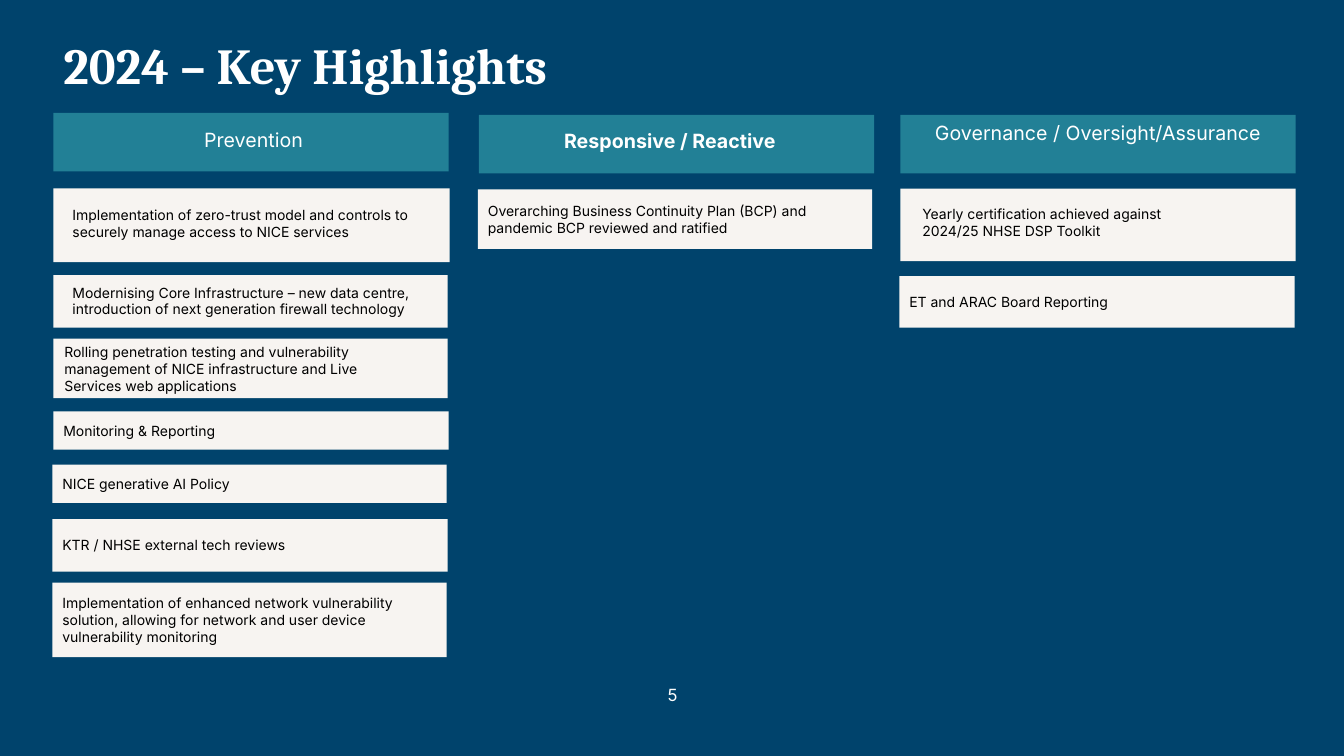
"""Build the 2024 key highlights slide with three columns of cards."""
from typing import NamedTuple, Optional

from pptx import Presentation
from pptx import util as u
from pptx.dml.color import RGBColor
from pptx.enum import shapes, text

NAVY = RGBColor(0x00, 0x43, 0x6C)
TEAL = RGBColor(0x22, 0x80, 0x96)
CREAM = RGBColor(0xF7, 0xF4, 0xF1)
WHITE = RGBColor(0xFF, 0xFF, 0xFF)
BLACK = RGBColor(0x00, 0x00, 0x00)


class Area(NamedTuple):
    """Hold left, top, width and height in inches."""
    left: float
    top: float
    width: float
    height: float


class Style(NamedTuple):
    """Describe how a text looks."""
    size: int
    color: RGBColor
    font: str = "Inter"
    bold: bool = False
    align: text.PP_ALIGN = text.PP_ALIGN.LEFT


class Panel(NamedTuple):
    """Describe a filled panel, with an optional separate area for its text."""
    area: Area
    wording: str
    text_area: Optional[Area] = None
    fill: RGBColor = CREAM
    style: Style = Style(10, BLACK)


CENTER = text.PP_ALIGN.CENTER
TITLE = Style(36, WHITE, "Cambria", bold=True)
HEADING = Style(14, WHITE, align=CENTER)
PAGE_NUMBER = Style(12, WHITE, align=CENTER)

HEADINGS = [
    Panel(Area(0.53, 1.12, 3.92, 0.58), "Prevention",
          Area(0.79, 1.22, 3.45, 0.34), TEAL, HEADING),
    Panel(Area(4.75, 1.14, 3.92, 0.58), "Responsive / Reactive",
          Area(5.13, 1.23, 3.03, 0.34), TEAL, HEADING._replace(bold=True)),
    Panel(Area(8.93, 1.14, 3.92, 0.58), "Governance / Oversight/Assurance",
          Area(9.17, 1.15, 3.44, 0.57), TEAL, HEADING),
]
PREVENTION = [
    Panel(Area(0.53, 1.87, 3.93, 0.73),
          "Implementation of zero-trust model and controls to securely manage "
          "access to NICE services", Area(0.62, 2, 3.71, 0.44)),
    Panel(Area(0.53, 2.73, 3.91, 0.52),
          "Modernising Core Infrastructure – new data centre, introduction of "
          "next generation firewall technology", Area(0.62, 2.77, 3.7, 0.44)),
    Panel(Area(0.53, 3.36, 3.91, 0.59),
          "Rolling penetration testing and vulnerability management of NICE "
          "infrastructure and Live Services web applications",
          Area(0.54, 3.36, 3.7, 0.61)),
    Panel(Area(0.53, 4.08, 3.92, 0.38), "Monitoring & Reporting"),
    Panel(Area(0.52, 4.61, 3.91, 0.38), "NICE generative AI Policy"),
    Panel(Area(0.52, 5.15, 3.92, 0.52), "KTR / NHSE external tech reviews"),
    Panel(Area(0.52, 5.78, 3.91, 0.74),
          "Implementation of enhanced network vulnerability solution, allowing "
          "for network and user device vulnerability monitoring"),
]
RESPONSE = [
    Panel(Area(4.74, 1.88, 3.91, 0.59),
          "Overarching Business Continuity Plan (BCP) and pandemic BCP "
          "reviewed and ratified"),
]
GOVERNANCE = [
    Panel(Area(8.93, 1.87, 3.92, 0.72),
          "Yearly certification achieved against 2024/25 NHSE DSP Toolkit",
          Area(9.05, 1.99, 2.8, 0.44)),
    Panel(Area(8.92, 2.74, 3.92, 0.51), "ET and ARAC Board Reporting"),
]


def write(shape, wording: str, style: Style, anchor: text.MSO_ANCHOR) -> None:
    """Fill a shape with one styled paragraph."""
    frame = shape.text_frame
    frame.text = wording
    frame.word_wrap = True
    frame.vertical_anchor = anchor
    para = frame.paragraphs[0]
    para.alignment = style.align
    span = para.runs[0]
    span.font.name = style.font
    span.font.size = u.Pt(style.size)
    span.font.bold = style.bold
    span.font.color.rgb = style.color


def add_text(page, area: Area, wording: str, style: Style) -> None:
    """Add a text box that starts at the top of its area."""
    box = page.shapes.add_textbox(*map(u.Inches, area))
    write(box, wording, style, text.MSO_ANCHOR.TOP)


def add_panel(page, panel: Panel) -> None:
    """Add a filled rectangle with its text."""
    card = page.shapes.add_shape(
        shapes.MSO_SHAPE.RECTANGLE, *map(u.Inches, panel.area))
    card.shadow.inherit = False
    card.fill.solid()
    card.fill.fore_color.rgb = panel.fill
    card.line.fill.background()
    if panel.text_area:
        add_text(page, panel.text_area, panel.wording, panel.style)
    else:
        write(card, panel.wording, panel.style, text.MSO_ANCHOR.MIDDLE)


def main() -> None:
    """Build and save the deck."""
    deck = Presentation()
    deck.slide_width, deck.slide_height = u.Inches(13.33), u.Inches(7.5)
    page = deck.slides.add_slide(deck.slide_layouts[6])
    page.background.fill.solid()
    page.background.fill.fore_color.rgb = NAVY
    add_text(page, Area(0.53, 0.29, 12.11, 1.27), "2024 – Key Highlights", TITLE)
    for panel in HEADINGS + PREVENTION + RESPONSE + GOVERNANCE:
        add_panel(page, panel)
    add_text(page, Area(5.17, 6.74, 3, 0.4), "5", PAGE_NUMBER)
    deck.save("out.pptx")


if __name__ == "__main__":
    main()
